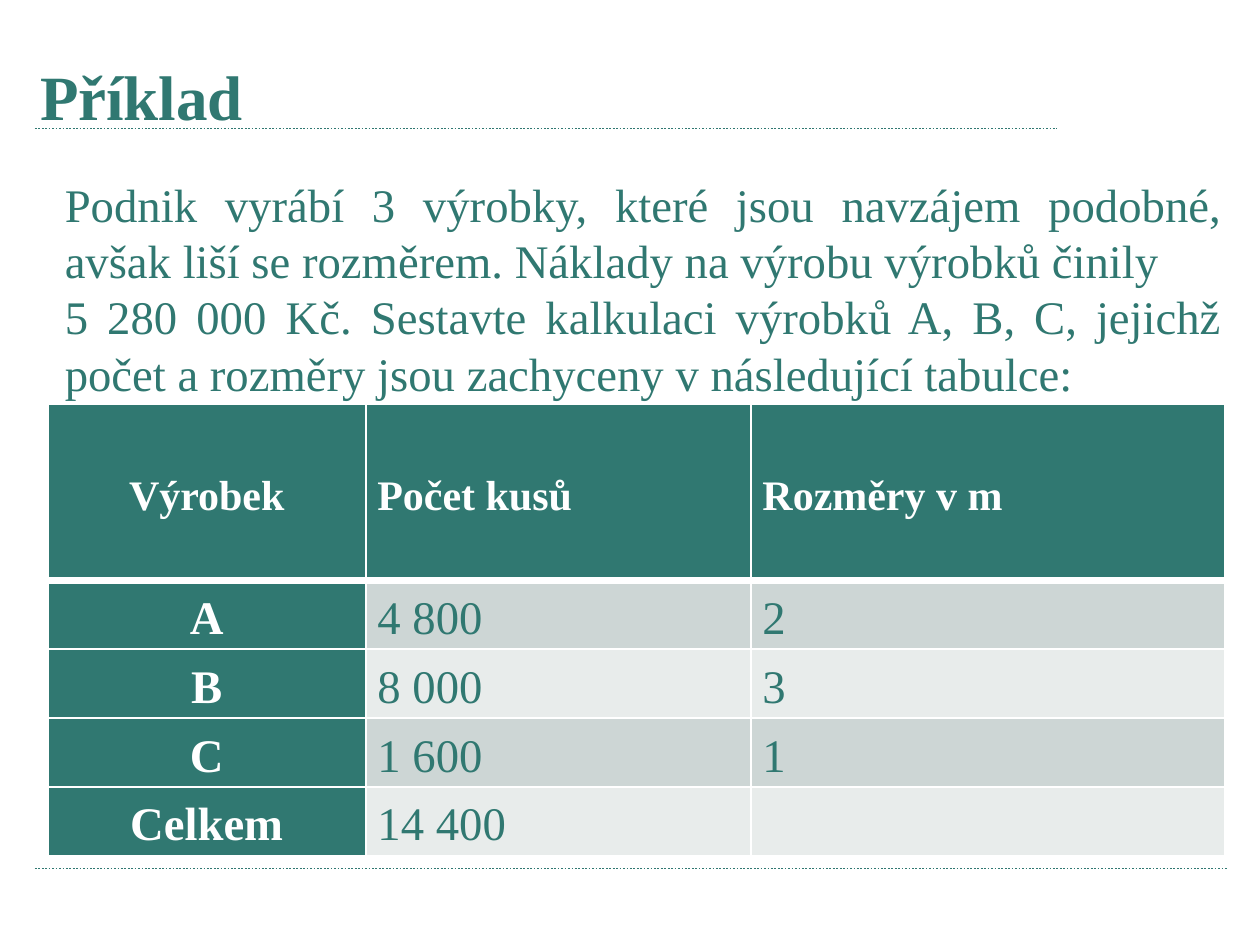
from lxml import etree
from pptx import Presentation
from pptx import util as u
from pptx.dml.color import RGBColor
from pptx.enum import dml, shapes, text
from pptx.oxml.ns import qn

TEAL = RGBColor(0x30, 0x78, 0x71)
WHITE = RGBColor(0xFF, 0xFF, 0xFF)
BAND_DARK = RGBColor(0xCD, 0xD6, 0xD5)
BAND_LIGHT = RGBColor(0xE8, 0xEC, 0xEB)
FONT = "Times New Roman"

TASK_PARAGRAPHS = [
    "Podnik vyrábí 3 výrobky, které jsou navzájem podobné, avšak liší se "
    "rozměrem. Náklady na výrobu výrobků činily",
    "5 280 000 Kč. Sestavte kalkulaci výrobků A, B, C, jejichž počet a "
    "rozměry jsou zachyceny v následující tabulce:",
]
PRODUCTS = [
    ["Výrobek", "Počet kusů", "Rozměry v m"],
    ["A", "4 800", "2"],
    ["B", "8 000", "3"],
    ["C", "1 600", "1"],
    ["Celkem", "14 400", ""],
]
COLUMN_SHARES = [0.27, 0.327, 0.403]
HEADER_HEIGHT = 75.6


def set_attributes(target, values):
    for name, value in values.items():
        setattr(target, name, value)


def add_run(paragraph, content, size, color, bold=False):
    run = paragraph.add_run()
    run.text = content
    set_attributes(run.font, {"name": FONT, "size": u.Pt(size), "bold": bold})
    run.font.color.rgb = color


def add_rule(slide, left, top, width):
    connector = slide.shapes.add_connector(
        shapes.MSO_CONNECTOR.STRAIGHT,
        u.Pt(left), u.Pt(top), u.Pt(left + width), u.Pt(top))
    connector.line.color.rgb = TEAL
    set_attributes(connector.line, {
        "width": u.Pt(0.75), "dash_style": dml.MSO_LINE.ROUND_DOT})
    etree.SubElement(connector.element.spPr, qn("a:effectLst"))


def add_title(slide, left, top, width, height):
    title = slide.shapes.title
    set_attributes(title, {
        "left": u.Pt(left), "top": u.Pt(top),
        "width": u.Pt(width), "height": u.Pt(height)})
    set_attributes(title.text_frame, {
        "vertical_anchor": text.MSO_ANCHOR.MIDDLE, "word_wrap": True})
    paragraph = title.text_frame.paragraphs[0]
    paragraph.alignment = text.PP_ALIGN.LEFT
    add_run(paragraph, "Příklad", 27, TEAL, True)
    add_rule(slide, left + 5, top + 35.6, width - 38)


def add_task(slide, left, top, width, height):
    box = slide.shapes.add_textbox(
        u.Pt(left), u.Pt(top), u.Pt(width), u.Pt(height))
    frame = box.text_frame
    frame.word_wrap = True
    for index, content in enumerate(TASK_PARAGRAPHS):
        paragraph = frame.add_paragraph() if index else frame.paragraphs[0]
        paragraph.alignment = text.PP_ALIGN.JUSTIFY
        add_run(paragraph, content, 20, TEAL)


def set_borders(cell, bottom_width):
    properties = cell._tc.get_or_add_tcPr()
    for side, width in zip("LRTB", (1, 1, 1, bottom_width)):
        border = etree.SubElement(
            properties, qn(f"a:ln{side}"), w=str(u.Pt(width)))
        fill = etree.SubElement(border, qn("a:solidFill"))
        etree.SubElement(fill, qn("a:srgbClr"), val=str(WHITE))


def fill_cell(cell, content, row, column):
    is_heading = row == 0 or column == 0
    set_borders(cell, 3 if row == 0 else 1)
    cell.fill.solid()
    band = BAND_DARK if row % 2 else BAND_LIGHT
    cell.fill.fore_color.rgb = TEAL if is_heading else band
    set_attributes(cell, {
        "margin_left": u.Pt(5), "margin_right": u.Pt(5),
        "margin_top": 0, "margin_bottom": 0,
        "vertical_anchor": text.MSO_ANCHOR.MIDDLE})
    if content:
        paragraph = cell.text_frame.paragraphs[0]
        set_attributes(paragraph, {
            "alignment": text.PP_ALIGN.JUSTIFY if column else text.PP_ALIGN.CENTER,
            "line_spacing": 1.15})
        add_run(paragraph, content, 20 if row else 18,
                WHITE if is_heading else TEAL, is_heading)


def add_products(slide, left, top, width, height):
    table = slide.shapes.add_table(
        len(PRODUCTS), len(COLUMN_SHARES),
        u.Pt(left), u.Pt(top), u.Pt(width), u.Pt(height)).table
    for column, share in zip(table.columns, COLUMN_SHARES):
        column.width = u.Pt(width * share)
    row_height = (height - HEADER_HEIGHT) / (len(PRODUCTS) - 1)
    for index, values in enumerate(PRODUCTS):
        table.rows[index].height = u.Pt(row_height if index else HEADER_HEIGHT)
        for column, content in enumerate(values):
            fill_cell(table.cell(index, column), content, index, column)


def main():
    presentation = Presentation()
    set_attributes(presentation, {
        "slide_width": u.Pt(540), "slide_height": u.Pt(405)})
    slide = presentation.slides.add_slide(presentation.slide_layouts[5])
    add_title(slide, 10, 19.5, 476, 42.5)
    add_rule(slide, 15, 372.3, 511)
    add_task(slide, 20.7, 72, 510, 104)
    add_products(slide, 20.5, 173.2, 504.7, 193.6)
    presentation.save("out.pptx")


if __name__ == "__main__":
    main()
